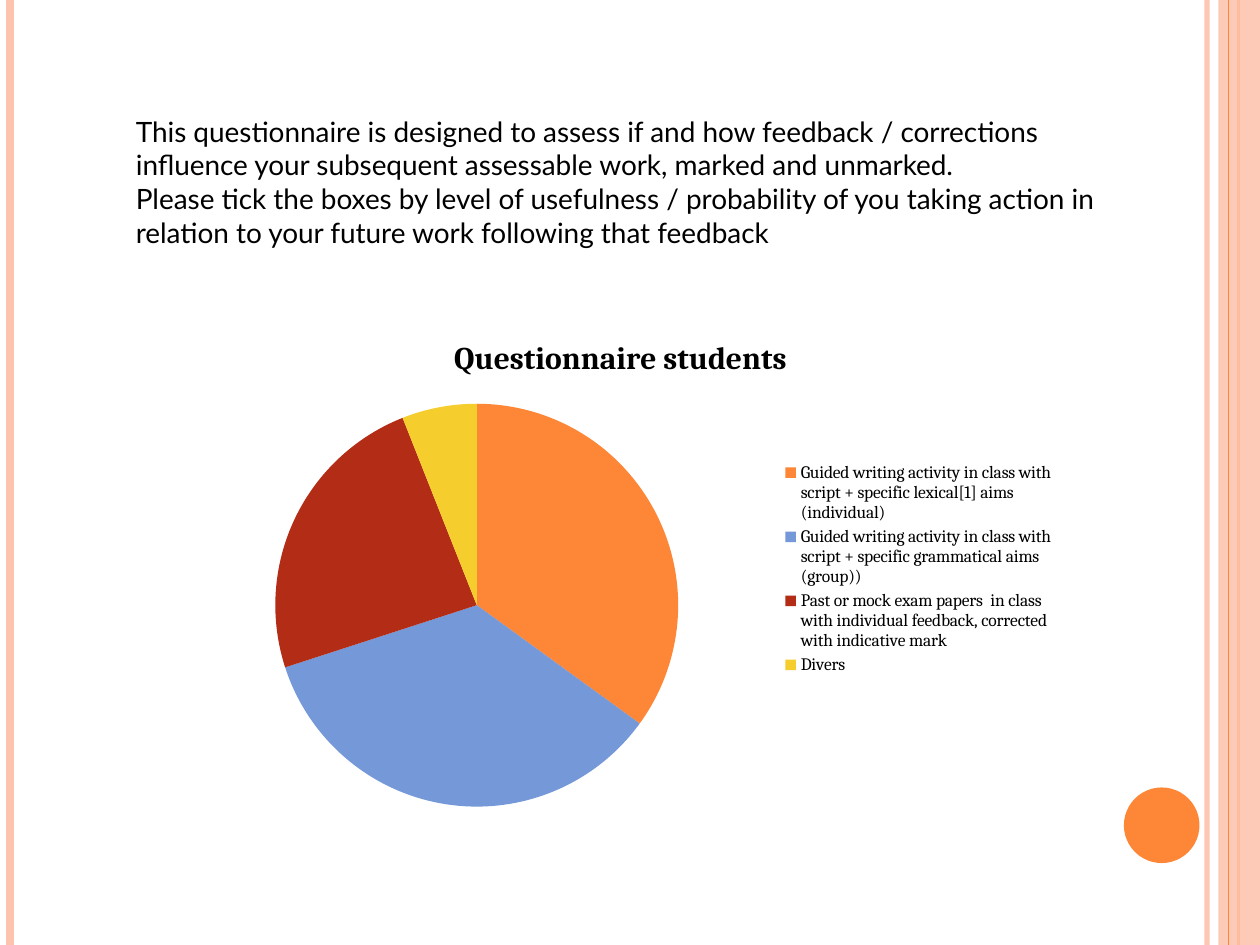
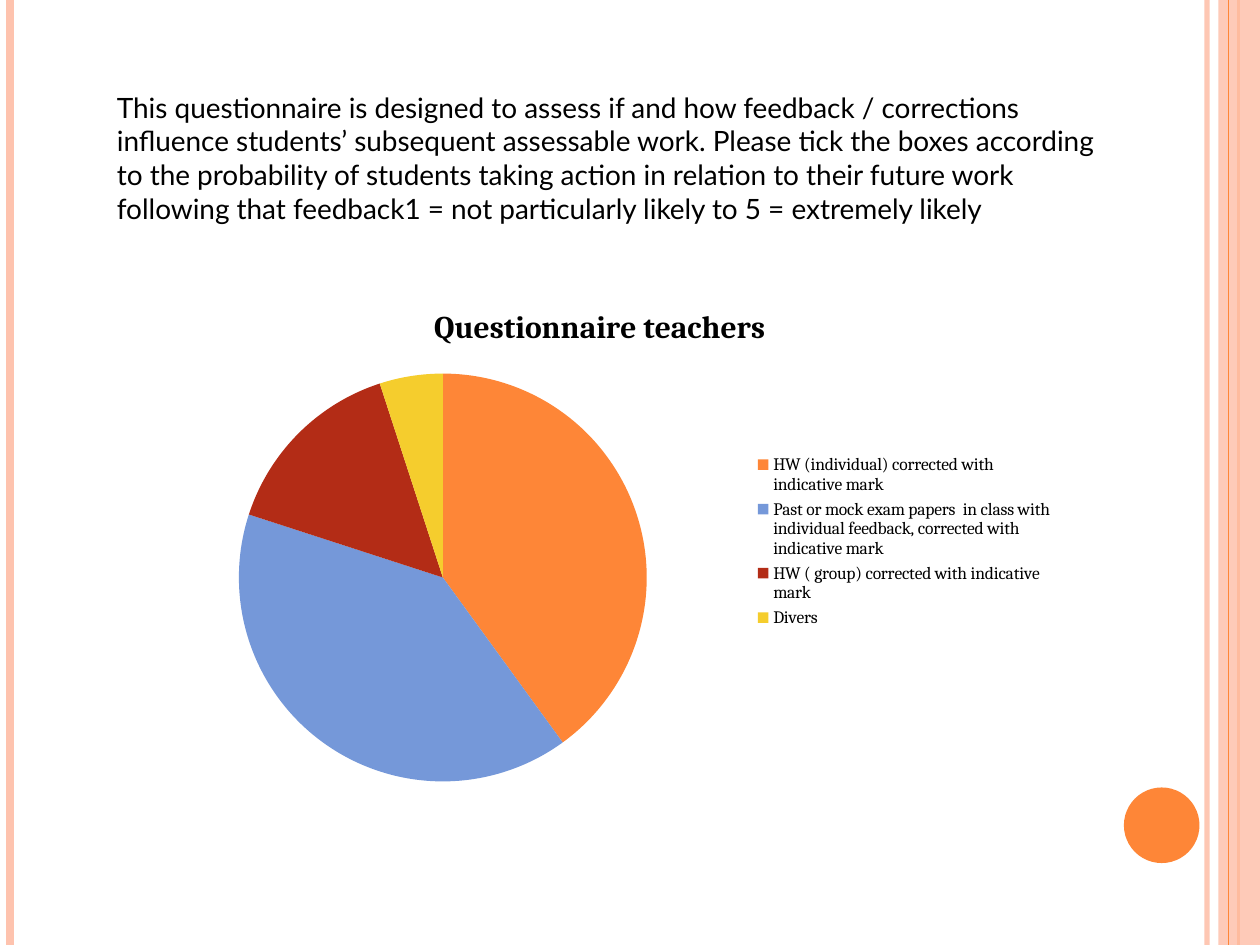
"""Two questionnaire slides, each with an introduction and a pie chart."""
from dataclasses import dataclass

from lxml import etree
from pptx import Presentation
from pptx import util as u
from pptx.chart import data
from pptx.dml import color
from pptx.enum import chart as charts, shapes, text
from pptx.oxml import ns


@dataclass(frozen=True)
class Theme:
    """Colours, fonts and type sizes of the deck."""
    accent: str = "FE8637"
    pale: str = "FEC3AE"
    ink: str = "000000"
    slices: tuple = ("FE8637", "7598D9", "B32C16", "F5CD2D")
    body_font: str = "Lato"
    chart_font: str = "Cambria"
    body_size: int = 16
    title_size: int = 18
    legend_size: int = 10


THEME = Theme()
SLIDE_WIDTH, SLIDE_HEIGHT = 10, 7.5


def inches(*lengths):
    """Convert several lengths to inches."""
    return [u.Inches(length) for length in lengths]


def paint(fill, rgb, alpha=100):
    """Fill solidly, with an opacity in percent."""
    fill.solid()
    fill.fore_color.rgb = color.RGBColor.from_string(rgb)
    if alpha < 100:
        tint = fill.fore_color._xFill.find(ns.qn("a:srgbClr"))
        etree.SubElement(tint, ns.qn("a:alpha"), val=str(alpha * 1000))


def style_font(font, name, size, bold=False):
    """Apply the typeface, size, weight and ink colour."""
    font.name, font.size, font.bold = name, u.Pt(size), bold
    font.color.rgb = color.RGBColor.from_string(THEME.ink)


def add_stripe(slide, x, rgb, width, alpha=100):
    """Draw a full-height vertical line."""
    stripe = slide.shapes.add_connector(
        shapes.MSO_CONNECTOR.STRAIGHT, *inches(x, 0, x, SLIDE_HEIGHT))
    stripe.line.width = u.Pt(width)
    paint(stripe.line.fill, rgb, alpha)
    etree.SubElement(stripe._element.spPr, ns.qn("a:effectLst"))


def add_plain_shape(slide, kind, box, rgb, alpha=100):
    """Draw a filled shape without outline or shadow."""
    shape = slide.shapes.add_shape(kind, *inches(*box))
    shape.shadow.inherit = False
    shape.line.fill.background()
    paint(shape.fill, rgb, alpha)


def add_frame(slide):
    """Draw the stripes, side band and disc shared by all slides."""
    add_stripe(slide, 9.58, THEME.pale, 3, alpha=93)
    add_stripe(slide, 0.08, THEME.pale, 4.5)
    add_stripe(slide, 9.83, THEME.accent, 1.5)
    add_plain_shape(slide, shapes.MSO_SHAPE.RECTANGLE,
                    (9.67, 0, SLIDE_WIDTH - 9.67, SLIDE_HEIGHT), THEME.pale, alpha=87)
    add_stripe(slide, 9.75, THEME.accent, 0.75)
    add_plain_shape(slide, shapes.MSO_SHAPE.OVAL, (8.92, 6.25, 0.6, 0.6), THEME.accent)


def add_text(slide, box, paragraphs, **font_format):
    """Write paragraphs in a wrapped, vertically centred text box."""
    frame = slide.shapes.add_textbox(*inches(*box)).text_frame
    frame.word_wrap = True
    frame.vertical_anchor = text.MSO_ANCHOR.MIDDLE
    for index, wording in enumerate(paragraphs):
        paragraph = frame.paragraphs[0] if index == 0 else frame.add_paragraph()
        run = paragraph.add_run()
        run.text = wording
        style_font(run.font, **font_format)


def add_pie(slide, box, title, shares):
    """Add a titled pie chart with its legend on the right."""
    answers = data.CategoryChartData()
    answers.categories = list(shares)
    answers.add_series(title, list(shares.values()))
    pie = slide.shapes.add_chart(charts.XL_CHART_TYPE.PIE, *inches(*box), answers).chart
    style_font(pie.font, THEME.chart_font, THEME.legend_size)

    pie.has_title = True
    heading = pie.chart_title.text_frame
    heading.text = title
    style_font(heading.paragraphs[0].runs[0].font, THEME.chart_font,
               THEME.title_size, bold=True)

    pie.has_legend = True
    pie.legend.position = charts.XL_LEGEND_POSITION.RIGHT
    pie.legend.include_in_layout = False

    plot = pie.plots[0]
    plot.vary_by_categories = True
    for index, rgb in enumerate(THEME.slices):
        paint(plot.series[0].points[index].format.fill, rgb)


def add_questionnaire(deck, intro_box, intro, pie_box, title, shares):
    """Add one slide with its introduction and results."""
    slide = deck.slides.add_slide(deck.slide_layouts[6])
    add_frame(slide)
    add_text(slide, intro_box, intro, name=THEME.body_font, size=THEME.body_size)
    add_pie(slide, pie_box, title, shares)


def main():
    """Build and save the deck."""
    deck = Presentation()
    deck.slide_width, deck.slide_height = inches(SLIDE_WIDTH, SLIDE_HEIGHT)
    exam_papers = ("Past or mock exam papers  in class with individual feedback, "
                   "corrected with indicative mark")
    opening = "This questionnaire is designed to assess if and how feedback / corrections influence "

    add_questionnaire(
        deck,
        intro_box=(0.98, 0.85, 7.87, 1.18),
        intro=[
            opening + "your subsequent assessable work, marked and unmarked.",
            "Please tick the boxes by level of usefulness / probability of you taking "
            "action in relation to your future work following that feedback",
        ],
        pie_box=(1.38, 2.49, 7.09, 4.05),
        title="Questionnaire students",
        shares={
            "Guided writing activity in class with script + specific lexical[1] aims "
            "(individual)": 35,
            "Guided writing activity in class with script + specific grammatical aims "
            "(group))": 35,
            exam_papers: 24,
            "Divers": 6,
        })

    add_questionnaire(
        deck,
        intro_box=(0.83, 0.66, 8.03, 1.18),
        intro=[
            opening + "students’ subsequent assessable work. Please tick the boxes "
            "according to the probability of students taking action in relation to their "
            "future work following that feedback1 = not particularly likely to "
            "5 = extremely likely",
        ],
        pie_box=(1.06, 2.25, 7.4, 4.09),
        title="Questionnaire teachers",
        shares={
            "HW (individual) corrected with indicative mark": 40,
            exam_papers: 40,
            "HW ( group) corrected with indicative mark": 15,
            "Divers": 5,
        })

    deck.save("out.pptx")


if __name__ == "__main__":
    main()
